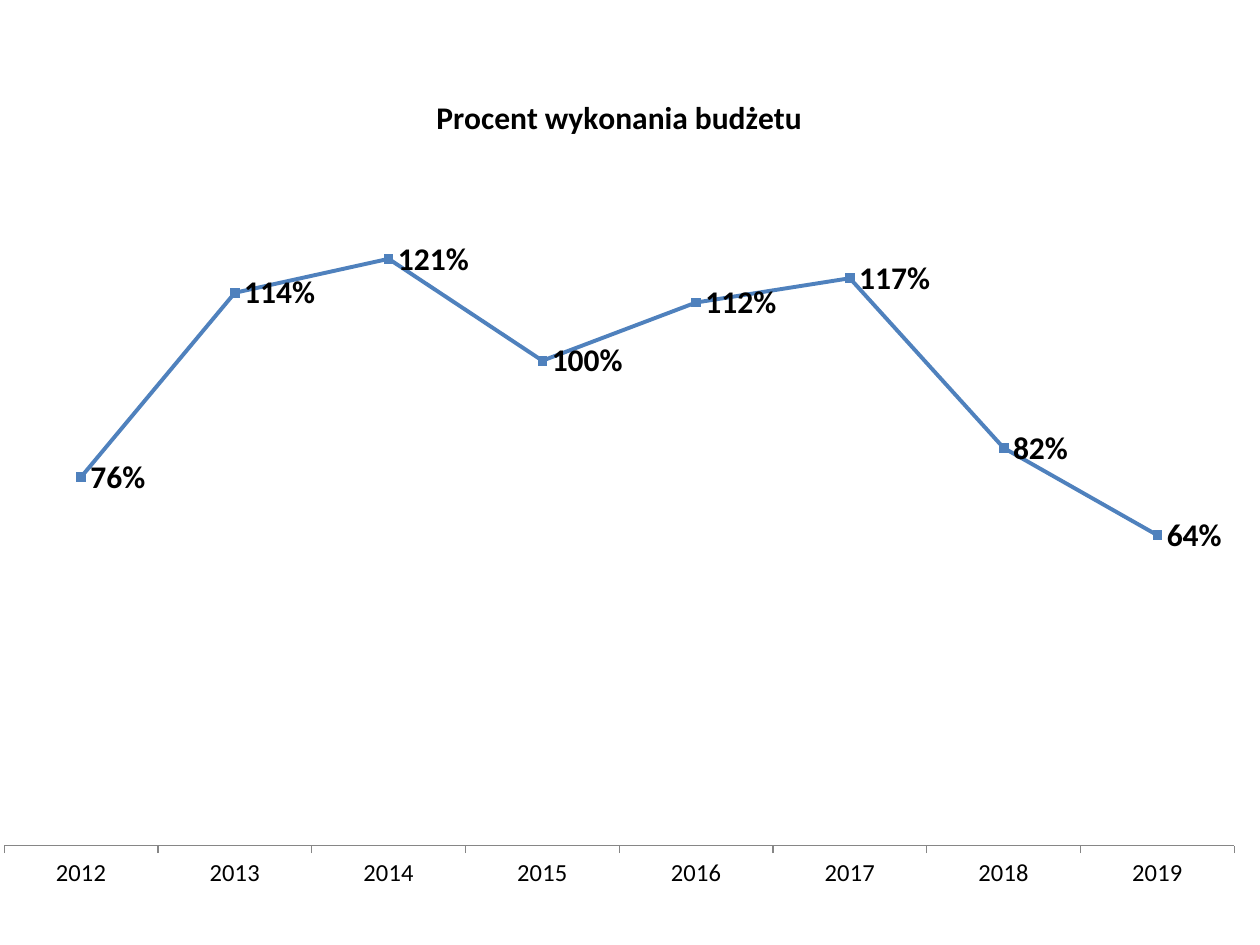
import pptx
import pptx.chart.data
import pptx.dml.color
import pptx.enum.chart
import pptx.oxml
import pptx.oxml.ns
import pptx.util

COLORS = {"text": "000000", "line": "4F81BD", "axis": "868686"}
FONT = "Calibri"
TITLE = "Procent wykonania budżetu"
BUDGET = {
    "2012": 0.76, "2013": 1.14, "2014": 1.21, "2015": 1.00,
    "2016": 1.12, "2017": 1.17, "2018": 0.82, "2019": 0.64,
}
PLOT_SHARES = {"x": 0.02, "y": 0.12, "w": 0.96, "h": 0.81}


def color(name):
    return pptx.dml.color.RGBColor.from_string(COLORS[name])


def style_font(font, size, bold=False):
    font.name = FONT
    font.size = pptx.util.Pt(size)
    font.bold = bold
    font.color.rgb = color("text")


def set_plot_layout(chart, shares):
    plot_area = chart.plots[0]._element.getparent()
    for old_layout in plot_area.findall(pptx.oxml.ns.qn("c:layout")):
        plot_area.remove(old_layout)
    places = "".join(f'<c:{key} val="{share}"/>' for key, share in shares.items())
    layout = pptx.oxml.parse_xml(
        f'<c:layout {pptx.oxml.ns.nsdecls("c")}><c:manualLayout>'
        '<c:layoutTarget val="inner"/><c:xMode val="edge"/><c:yMode val="edge"/>'
        f'{places}</c:manualLayout></c:layout>'
    )
    plot_area.insert(0, layout)


def style_axes(chart):
    years = chart.category_axis
    years.major_tick_mark = pptx.enum.chart.XL_TICK_MARK.OUTSIDE
    years.has_major_gridlines = False
    years.format.line.color.rgb = color("axis")
    style_font(years.tick_labels.font, 14)
    percent = chart.value_axis
    percent.minimum_scale = 0
    percent.maximum_scale = 1.4
    percent.has_major_gridlines = False
    percent.tick_labels.number_format = "0%"
    percent.tick_labels.number_format_is_linked = False
    percent.visible = False


def style_series(series):
    series.smooth = False
    series.format.line.color.rgb = color("line")
    series.format.line.width = pptx.util.Pt(2.25)
    marker = series.marker
    marker.style = pptx.enum.chart.XL_MARKER_STYLE.SQUARE
    marker.size = 5
    marker.format.fill.solid()
    marker.format.fill.fore_color.rgb = color("line")
    marker.format.line.color.rgb = color("line")
    labels = series.data_labels
    labels.show_value = True
    labels.number_format = "0%"
    labels.number_format_is_linked = False
    labels.position = pptx.enum.chart.XL_LABEL_POSITION.RIGHT
    style_font(labels.font, 18, True)


def add_budget_chart(page, box):
    data = pptx.chart.data.CategoryChartData(number_format="0%")
    data.categories = list(BUDGET)
    data.add_series(TITLE, list(BUDGET.values()))
    chart = page.shapes.add_chart(
        pptx.enum.chart.XL_CHART_TYPE.LINE_MARKERS, *box, data
    ).chart
    style_font(chart.font, 10)
    chart.has_legend = False
    chart.has_title = True
    chart.chart_title.include_in_layout = False
    heading = chart.chart_title.text_frame
    heading.text = TITLE
    style_font(heading.paragraphs[0].runs[0].font, 18, True)
    chart.plots[0].vary_by_categories = False
    set_plot_layout(chart, PLOT_SHARES)
    style_axes(chart)
    style_series(chart.plots[0].series[0])


def main():
    deck = pptx.Presentation()
    deck.slide_width = pptx.util.Inches(10)
    deck.slide_height = pptx.util.Inches(7.5)
    page = deck.slides.add_slide(deck.slide_layouts.get_by_name("Blank"))
    width, height = deck.slide_width, deck.slide_height
    box = (
        round(-0.017 * width), round(0.07 * height),
        round(1.017 * width), round(0.887 * height),
    )
    add_budget_chart(page, box)
    deck.save("out.pptx")


if __name__ == "__main__":
    main()
